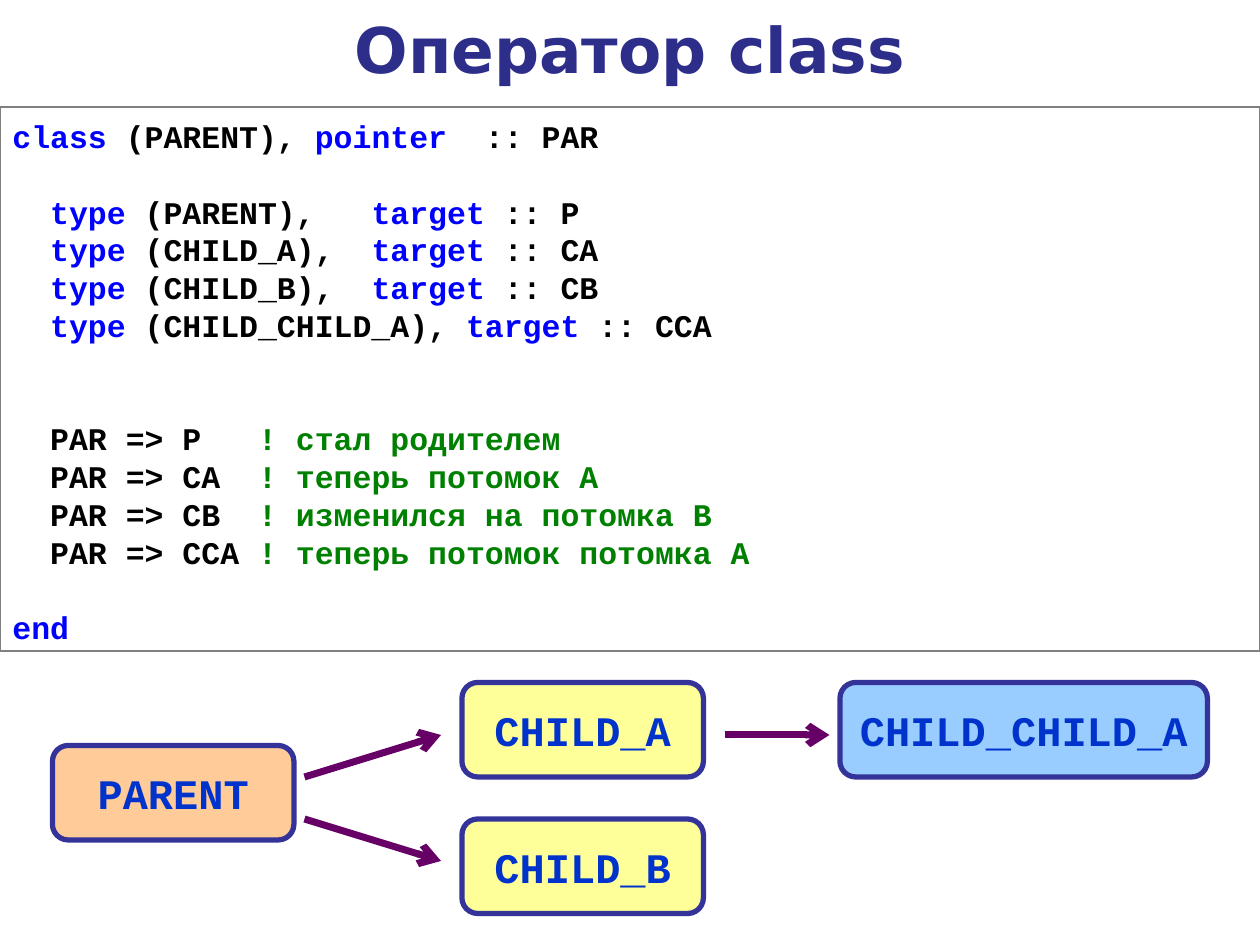
"""Build a slide on the Fortran class statement with a class tree."""
from lxml import etree
from pptx import Presentation
from pptx.dml.color import RGBColor
from pptx.enum import shapes, text
from pptx.oxml import ns
from pptx.util import Pt

INK, KEY, NOTE = "000000", "0000FF", "008000"
MONO, PITCH = "Courier New", 21.6
TITLE = "Оператор class"
TYPES = [
    (" (PARENT),   ", "P"),
    (" (CHILD_A),  ", "CA"),
    (" (CHILD_B),  ", "CB"),
    (" (CHILD_CHILD_A), ", "CCA"),
]
MOVES = [
    ("P   ", "стал родителем"),
    ("CA  ", "теперь потомок А"),
    ("CB  ", "изменился на потомка B"),
    ("CCA ", "теперь потомок потомка А"),
]
HEAD = [("class", KEY), (" (PARENT), ", INK), ("pointer", KEY), ("  :: PAR", INK)]
BLOCKS = [
    (0, [HEAD]),
    (1, [[("  ", INK), ("type", KEY), (name, INK), ("target", KEY),
          (" :: " + var, INK)] for name, var in TYPES]),
    (2, [[("  PAR => " + var, INK), ("! " + note, NOTE)] for var, note in MOVES]),
    (1, [[("end", KEY)]]),
]
NODES = [
    ("PARENT", 30, 426, 138, "FFCC99"),
    ("CHILD_A", 264, 390, 138, "FFFF99"),
    ("CHILD_B", 264, 468, 138, "FFFF99"),
    ("CHILD_CHILD_A", 480, 390, 210, "99CCFF"),
]
ARROWS = [(174, 444, 252, 420), (174, 468, 252, 492), (414, 420, 474, 420)]


def rgb(code):
    """Return the colour of a hex string."""
    return RGBColor.from_string(code)


def write(para, words, size=18, font=MONO, color=INK, align=text.PP_ALIGN.LEFT):
    """Add one bold run to a paragraph."""
    para.alignment = align
    run = para.add_run()
    run.text = words
    run.font.size, run.font.name, run.font.bold = Pt(size), font, True
    run.font.color.rgb = rgb(color)


def panel(slide, kind, area, fill, line, width):
    """Add a filled and outlined shape without a shadow."""
    shape = slide.shapes.add_shape(kind, *map(Pt, area))
    shape.shadow.inherit = False
    shape.fill.solid()
    shape.fill.fore_color.rgb = rgb(fill)
    shape.line.color.rgb = rgb(line)
    shape.line.width = Pt(width)
    return shape


def listing(slide):
    """Add the code panel, with gaps between its blocks."""
    box = panel(slide, shapes.MSO_SHAPE.RECTANGLE, (0, 61.2, 720, 311), "FFFFFF", "808080", 1)
    frame = box.text_frame
    frame.word_wrap = True
    frame.vertical_anchor = text.MSO_ANCHOR.TOP
    frame.margin_top, frame.margin_bottom = Pt(5.6), Pt(2)
    para = frame.paragraphs[0]
    for gap, lines in BLOCKS:
        for num, runs in enumerate(lines):
            if runs is not HEAD:
                para = frame.add_paragraph()
            para.line_spacing = Pt(PITCH)
            if gap and num == 0:
                para.space_before = Pt(gap * PITCH)
            for words, color in runs:
                write(para, words, color=color)


def node(slide, name, left, top, width, fill):
    """Add one class of the tree."""
    box = panel(slide, shapes.MSO_SHAPE.ROUNDED_RECTANGLE, (left, top, width, 54), fill, "333399", 3)
    frame = box.text_frame
    frame.word_wrap = False
    frame.vertical_anchor = text.MSO_ANCHOR.MIDDLE
    write(frame.paragraphs[0], name, size=24, color="0033CC", align=text.PP_ALIGN.CENTER)


def arrow(slide, ends):
    """Add an arrow between two points."""
    link = slide.shapes.add_connector(shapes.MSO_CONNECTOR.STRAIGHT, *map(Pt, ends))
    link.line.color.rgb = rgb("660066")
    link.line.width = Pt(4)
    etree.SubElement(link.line._get_or_add_ln(), ns.qn("a:tailEnd"), type="arrow")
    etree.SubElement(link._element.spPr, ns.qn("a:effectLst"))


def main():
    """Build and save the slide."""
    deck = Presentation()
    deck.slide_width, deck.slide_height = Pt(720), Pt(540)
    slide = deck.slides.add_slide(deck.slide_layouts[6])
    frame = slide.shapes.add_textbox(0, 0, Pt(720), Pt(50.4)).text_frame
    frame.word_wrap = True
    frame.margin_top, frame.margin_bottom = Pt(6), Pt(2)
    write(frame.paragraphs[0], TITLE, size=36, font="DejaVu Sans", color="2D2D8A",
          align=text.PP_ALIGN.CENTER)
    listing(slide)
    for item in NODES:
        node(slide, *item)
    for ends in ARROWS:
        arrow(slide, ends)
    deck.save("out.pptx")


if __name__ == "__main__":
    main()
